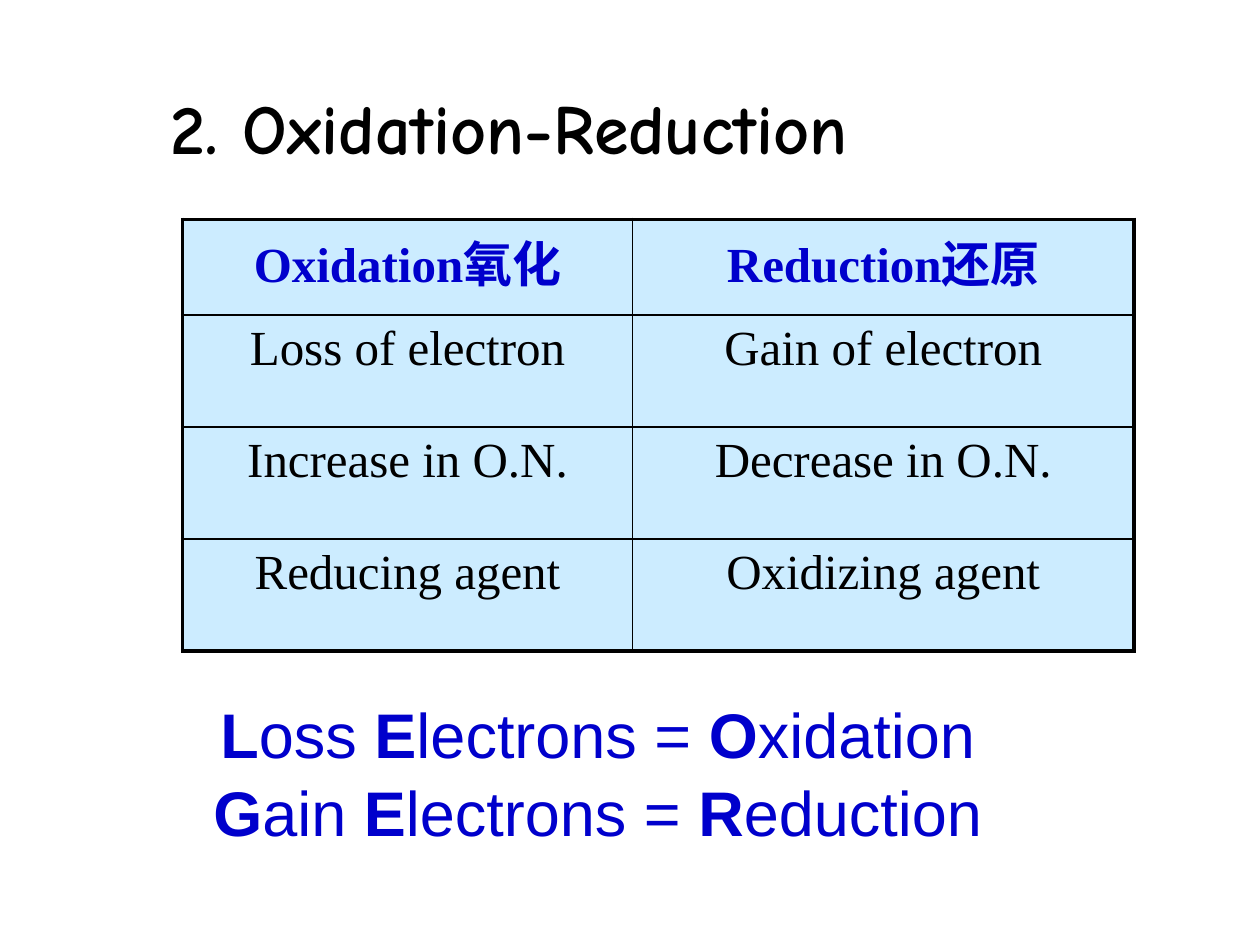
from itertools import groupby

from lxml import etree
from pptx import Presentation
from pptx.dml.color import RGBColor
from pptx.enum.text import MSO_ANCHOR, PP_ALIGN
from pptx.oxml.ns import qn
from pptx.util import Cm, Pt

LEFT, CENTER = PP_ALIGN.LEFT, PP_ALIGN.CENTER
TOP, MIDDLE = MSO_ANCHOR.TOP, MSO_ANCHOR.MIDDLE

BLACK = RGBColor(0x00, 0x00, 0x00)
BLUE = RGBColor(0x00, 0x00, 0xCC)
PALE_BLUE = RGBColor(0xCC, 0xEC, 0xFF)

TITLE_FONT = {"name": "Comic Neue", "size": Pt(40), "bold": True}
HEADER_FONT = {"name": "Times New Roman", "size": Pt(28), "bold": True}
BODY_FONT = {**HEADER_FONT, "bold": False}
MNEMONIC_FONT = {"name": "Arial", "size": Pt(36)}

REACTIONS = [
    ("Oxidation氧化", "Reduction还原"),
    ("Loss of electron", "Gain of electron"),
    ("Increase in O.N.", "Decrease in O.N."),
    ("Reducing agent", "Oxidizing agent"),
]
MNEMONICS = ["Loss Electrons = Oxidation", "Gain Electrons = Reduction"]


def set_all(target, values):
    for attribute, value in values.items():
        setattr(target, attribute, value)


class ReactionSlide:
    """Holds the slide and its style."""

    outer_line, inner_line = Pt(2.25), Pt(1)
    hanging_indent = Cm(1.09)

    def __init__(self, presentation):
        self.slide = presentation.slides.add_slide(presentation.slide_layouts[5])

    def add_run(self, paragraph, text, font, color):
        run = paragraph.add_run()
        run.text = text
        set_all(run.font, font)
        run.font.color.rgb = color

    def title(self, text, box):
        heading = self.slide.shapes.title
        set_all(heading, box)
        set_all(heading.text_frame, {"vertical_anchor": MIDDLE, "word_wrap": True})
        paragraph = heading.text_frame.paragraphs[0]
        paragraph.alignment = LEFT
        self.add_run(paragraph, text, TITLE_FONT, BLACK)

    def border(self, cell, side, width):
        line = etree.SubElement(cell._tc.get_or_add_tcPr(), qn(f"a:ln{side}"), w=str(width))
        fill = etree.SubElement(line, qn("a:solidFill"))
        etree.SubElement(fill, qn("a:srgbClr"), val=str(BLACK))

    def table(self, rows, left, top, widths, heights):
        table = self.slide.shapes.add_table(
            len(rows), len(widths), left, top, sum(widths), sum(heights)).table
        for column, width in zip(table.columns, widths):
            column.width = width
        for row, height in zip(table.rows, heights):
            row.height = height
        for r, texts in enumerate(rows):
            for c, text in enumerate(texts):
                cell = table.cell(r, c)
                # Thick lines only around the outside
                outside = {"L": c == 0, "R": c == len(widths) - 1,
                           "T": r == 0, "B": r == len(rows) - 1}
                for side, is_outer in outside.items():
                    self.border(cell, side, self.outer_line if is_outer else self.inner_line)
                cell.fill.solid()
                cell.fill.fore_color.rgb = PALE_BLUE
                cell.vertical_anchor = TOP
                paragraph = cell.text_frame.paragraphs[0]
                paragraph.alignment = CENTER
                font, color = (HEADER_FONT, BLUE) if r == 0 else (BODY_FONT, BLACK)
                self.add_run(paragraph, text, font, color)

    def mnemonic(self, lines, left, top, width, height):
        frame = self.slide.shapes.add_textbox(left, top, width, height).text_frame
        set_all(frame, {"word_wrap": True, "margin_top": Cm(0.25)})
        for i, line in enumerate(lines):
            paragraph = frame.add_paragraph() if i else frame.paragraphs[0]
            set_all(paragraph, {"alignment": CENTER, "space_before": Pt(1.5 if i else 0)})
            properties = paragraph._p.get_or_add_pPr()
            properties.set("marL", str(self.hanging_indent))
            properties.set("indent", str(-self.hanging_indent))
            # Capitals carry the mnemonic, so they are bold
            for is_capital, letters in groupby(line, str.isupper):
                font = {**MNEMONIC_FONT, "bold": is_capital}
                self.add_run(paragraph, "".join(letters), font, BLUE)


def main():
    presentation = Presentation()
    set_all(presentation, {"slide_width": Cm(25.4), "slide_height": Cm(19.05)})
    slide = ReactionSlide(presentation)

    # Heading
    slide.title("2. Oxidation-Reduction", {
        "left": Cm(3.18), "top": Cm(0.64), "width": Cm(22.22), "height": Cm(3.81)})

    # Comparison of the two half reactions
    slide.table(REACTIONS, Cm(3.68), Cm(4.42),
                widths=[Cm(9.07), Cm(10.11)], heights=[Cm(1.93)] + [Cm(2.26)] * 3)

    # Memory aid
    slide.mnemonic(MNEMONICS, Cm(2.84), Cm(13.77), Cm(18.42), Cm(3.81))

    presentation.save("out.pptx")


if __name__ == "__main__":
    main()
